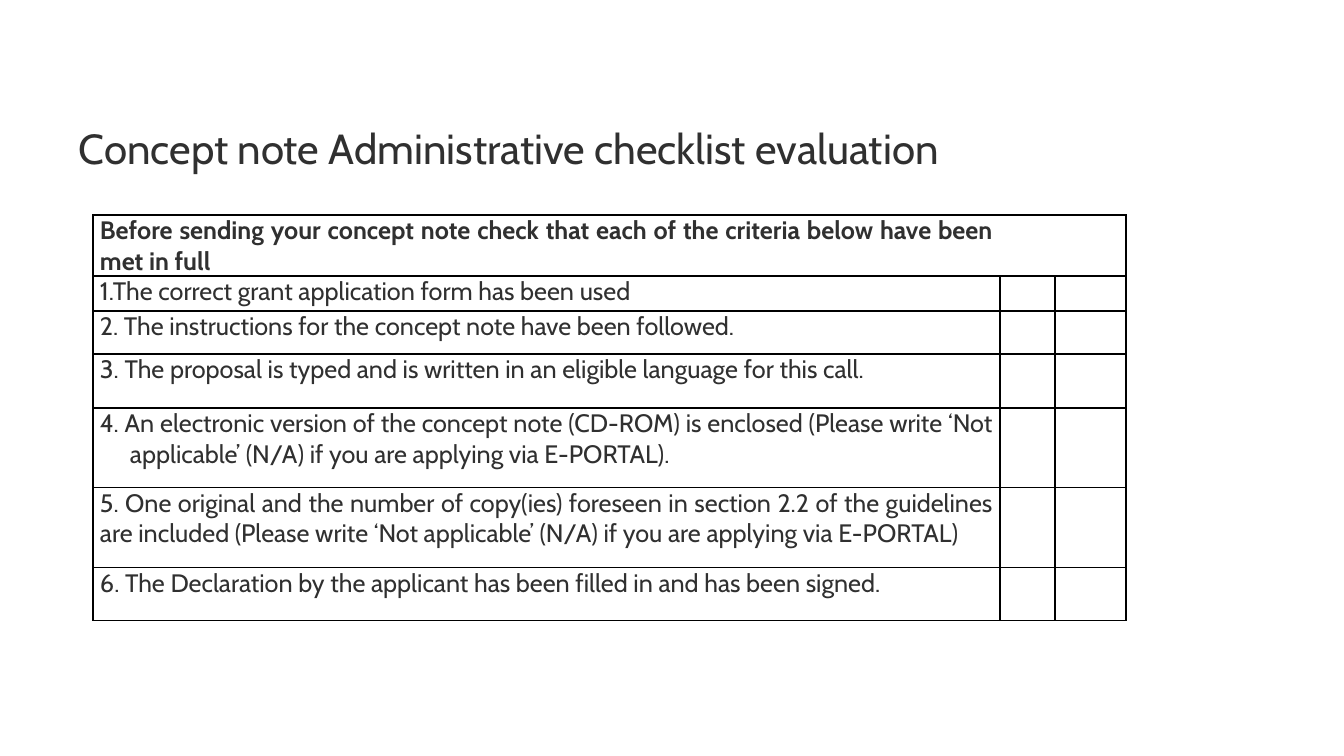
import pptx
import pptx.dml.color
import pptx.enum.text
import pptx.oxml
import pptx.oxml.ns
import pptx.util

PX = 9071
INK = "303030"
COLS = [907, 55, 71]
ROWS = [18, 61, 35, 43, 54, 80, 80, 53, 35]
ITEMS = [
    ("Before sending your concept note check that each of the criteria below have been met in full", 0),
    ("1.The correct grant application form has been used ", 0),
    ("2. The instructions for the concept note have been followed.", 0),
    ("3. The proposal is typed and is written in an eligible language for this call.", 0),
    ("4. An electronic version of the concept note (CD-ROM) is enclosed (Please write ‘Not applicable’ (N/A) if you are applying via E-PORTAL).", 30),
    ("5. One original and the number of copy(ies) foreseen in section 2.2 of the guidelines are included (Please write ‘Not applicable’ (N/A) if you are applying via E-PORTAL)", 0),
    ("6. The Declaration by the applicant has been filled in and has been signed. ", 24),
]


def px(n):
    return pptx.util.Emu(n * PX)


def color(code):
    return pptx.dml.color.RGBColor.from_string(code)


def write(frame, text, size=18, bold=False, align=None, hang=0,
          before=0, after=0, space=None):
    frame.word_wrap = True
    para = frame.paragraphs[0]
    para.alignment = align
    para.space_before = pptx.util.Pt(before)
    para.space_after = pptx.util.Pt(after)
    para.line_spacing = space
    if hang:
        props = para._p.get_or_add_pPr()
        props.set("marL", str(px(hang)))
        props.set("indent", str(-px(hang)))
    run = para.add_run()
    run.text = text
    run.font.name = "Cabin"
    run.font.size = pptx.util.Pt(size)
    run.font.bold = bold
    run.font.color.rgb = color(INK)


def title(slide, text):
    box = slide.shapes.add_textbox(px(71), px(124), px(1056), px(103))
    frame = box.text_frame
    frame.margin_left = frame.margin_right = px(8)
    frame.margin_top = frame.margin_bottom = px(4)
    write(frame, text, size=30, space=0.9)


def edges(row, col):
    if row == 0:
        return "B"
    if row == len(ROWS) - 1:
        return "T"
    if row == 1:
        return ["LTB", "TB", "RTB"][col]
    return "LRTB"


def border(cell, sides):
    props = cell._tc.get_or_add_tcPr()
    space = pptx.oxml.ns.nsdecls("a")
    for side in "LRTB":
        fill = "<a:noFill/>"
        if side in sides:
            fill = '<a:solidFill><a:srgbClr val="000000"/></a:solidFill>'
        props.append(pptx.oxml.parse_xml(
            f'<a:ln{side} {space} w="12700">{fill}</a:ln{side}>'))


def small(cell):
    para = cell.text_frame.paragraphs[0]._p
    para.append(pptx.oxml.parse_xml(
        f'<a:endParaRPr {pptx.oxml.ns.nsdecls("a")} sz="800"/>'))


def table(slide):
    frame = slide.shapes.add_table(
        len(ROWS), len(COLS), px(93), px(197), px(sum(COLS)), px(sum(ROWS)))
    grid = frame.table
    grid.first_row = grid.horz_banding = False
    for col, width in zip(grid.columns, COLS):
        col.width = px(width)
    for r, height in enumerate(ROWS):
        grid.rows[r].height = px(height)
        for c in range(len(COLS)):
            cell = grid.cell(r, c)
            cell.margin_left = cell.margin_right = px(7)
            cell.margin_top = cell.margin_bottom = 0
            border(cell, edges(r, c))
            cell.fill.background()
            if c == 0 and 0 < r <= len(ITEMS):
                text, hang = ITEMS[r - 1]
                write(cell.text_frame, text, bold=r == 1, hang=hang,
                      align=pptx.enum.text.PP_ALIGN.JUSTIFY, before=6, after=10)
            else:
                small(cell)
    grid.cell(0, 1).merge(grid.cell(0, 2))


def main():
    deck = pptx.Presentation()
    deck.slide_width = px(1344)
    deck.slide_height = px(756)
    slide = deck.slides.add_slide(deck.slide_layouts[6])
    title(slide, "Concept note Administrative checklist evaluation")
    table(slide)
    deck.save("out.pptx")


if __name__ == "__main__":
    main()
